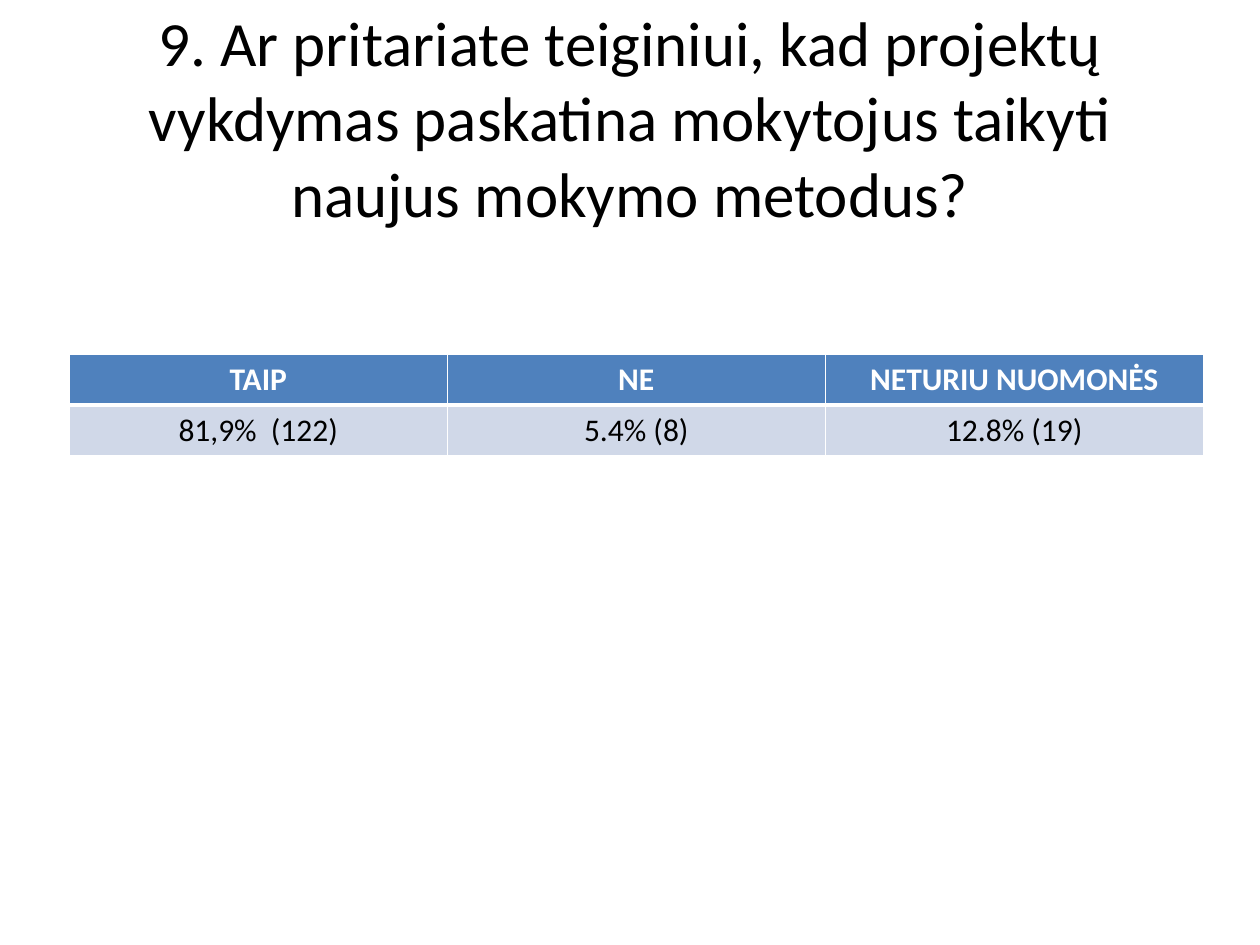
from lxml.etree import SubElement
from pptx import Presentation
from pptx.dml.color import RGBColor
from pptx.enum.text import MSO_ANCHOR, PP_ALIGN
from pptx.oxml.ns import qn
from pptx.util import Inches, Pt

FONT = "Calibri"
BLACK, WHITE = "000000", "FFFFFF"
HEADER_FILL, BODY_FILL = "4F81BD", "D0D8E8"
QUESTION = ("9. Ar pritariate teiginiui, kad projektų vykdymas "
            "paskatina mokytojus taikyti naujus mokymo metodus?")
ANSWERS = [
    ["TAIP", "NE", "NETURIU NUOMONĖS"],
    ["81,9%  (122)", "5.4% (8)", "12.8% (19)"],
]


def color(hex_value):
    return RGBColor.from_string(hex_value)


def format_paragraph(paragraph, size, hex_value, bold=False):
    paragraph.alignment = PP_ALIGN.CENTER
    paragraph.font.name = FONT
    paragraph.font.size = Pt(size)
    paragraph.font.bold = bold
    paragraph.font.color.rgb = color(hex_value)


def set_borders(cell, widths):
    properties = cell._tc.get_or_add_tcPr()
    for side, width in widths.items():
        line = SubElement(properties, qn(f"a:ln{side}"), w=str(Pt(width)))
        fill = SubElement(line, qn("a:solidFill"))
        SubElement(fill, qn("a:srgbClr"), val=WHITE)


def place_title(slide, left, top, width, height):
    title = slide.shapes.title
    title.left, title.top = Inches(left), Inches(top)
    title.width, title.height = Inches(width), Inches(height)
    frame = title.text_frame
    frame.text = QUESTION
    frame.word_wrap = True
    frame.vertical_anchor = MSO_ANCHOR.MIDDLE
    format_paragraph(frame.paragraphs[0], 36, BLACK)


def place_answers(slide, left, top, width, height):
    table = slide.shapes.add_table(
        len(ANSWERS), len(ANSWERS[0]),
        Inches(left), Inches(top), Inches(width), Inches(height)).table
    for row_index, row in enumerate(ANSWERS):
        is_header = row_index == 0
        for column_index, text in enumerate(row):
            cell = table.cell(row_index, column_index)
            cell.text = text
            # The thick rule separates the header from the answers
            set_borders(cell, {"L": 1, "R": 1,
                               "T": 1 if is_header else 3,
                               "B": 3 if is_header else 1})
            cell.fill.solid()
            cell.fill.fore_color.rgb = color(HEADER_FILL if is_header else BODY_FILL)
            format_paragraph(cell.text_frame.paragraphs[0], 18,
                             WHITE if is_header else BLACK, is_header)


def main():
    presentation = Presentation()
    presentation.slide_width = Inches(10)
    presentation.slide_height = Inches(7.5)
    slide = presentation.slides.add_slide(presentation.slide_layouts[5])
    place_title(slide, 0.5, 0.3, 9, 1.25)
    place_answers(slide, 0.55, 2.81, 9, 0.81)
    presentation.save("out.pptx")


if __name__ == "__main__":
    main()
